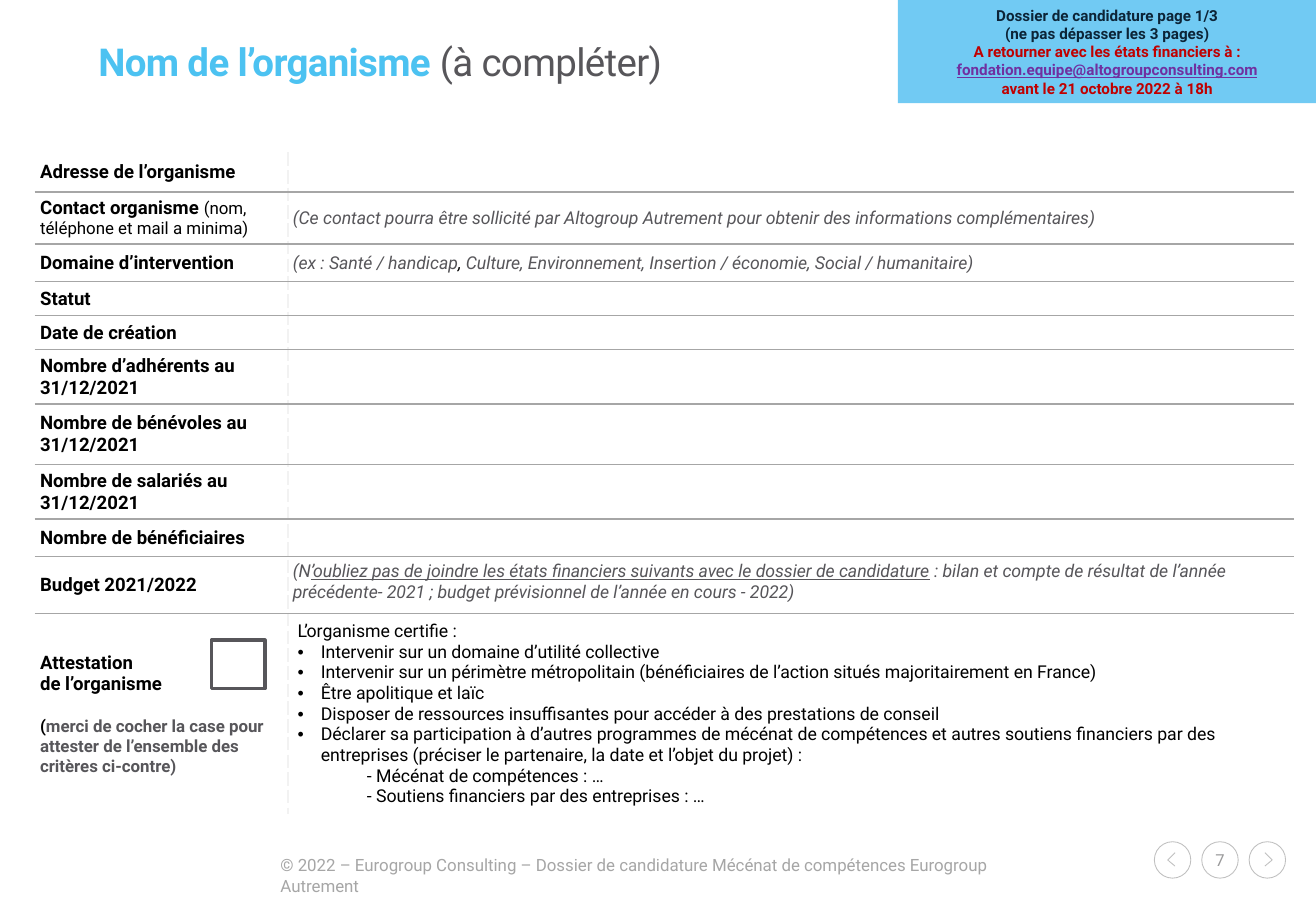
from dataclasses import dataclass
from typing import Optional

from lxml import etree
from pptx import Presentation
from pptx import util as u
from pptx.dml.color import RGBColor
from pptx.enum import shapes, text
from pptx.oxml import ns

PX = u.Inches(1) // 100
FONT = "Roboto"
BLACK = RGBColor(0, 0, 0)
WHITE = RGBColor(255, 255, 255)
GREY = RGBColor(0x57, 0x56, 0x5A)
RULE = RGBColor(0xA6, 0xA6, 0xA6)
DIVIDER = RGBColor(0xF2, 0xF2, 0xF2)
RING = RGBColor(0xBF, 0xBF, 0xBF)
PAGE = RGBColor(0x9A, 0x9A, 0x9B)
CYAN = RGBColor(0x4C, 0xC2, 0xF1)
SKY = RGBColor(0x71, 0xCA, 0xF3)
NAVY = RGBColor(0x0C, 0x24, 0x37)
RED = RGBColor(0xC0, 0, 0)
PURPLE = RGBColor(0x70, 0x30, 0xA0)


@dataclass(frozen=True)
class Run:
    words: str
    size: float = 10.5
    color: RGBColor = BLACK
    bold: bool = False
    italic: bool = False
    underline: bool = False


@dataclass(frozen=True)
class Para:
    runs: tuple[Run, ...]
    align: Optional[text.PP_ALIGN] = None
    indent: int = 0
    bullet: bool = False
    before: float = 0


@dataclass(frozen=True)
class Row:
    height: int
    label: tuple[Para, ...]
    answer: tuple[Para, ...] = ()
    anchor: text.MSO_ANCHOR = text.MSO_ANCHOR.MIDDLE
    answer_inset: int = 4


def label(words: str, *more: Run) -> Para:
    return Para((Run(words, 11, bold=True), *more))


def hint(words: str, color: RGBColor = GREY, underline: bool = False) -> Run:
    return Run(words, color=color, italic=True, underline=underline)


def bullet(words: str) -> Para:
    return Para((Run(words),), indent=19, bullet=True)


def header(words: str, color: RGBColor, underline: bool = False) -> Para:
    return Para((Run(words, 9, color, True, underline=underline),), text.PP_ALIGN.CENTER)


ROWS = [
    Row(32, (label("Adresse de l’organisme"),)),
    Row(41, (label("Contact organisme ", Run("(nom, téléphone et mail a minima)", 10)),),
        (Para((hint("(Ce contact pourra être sollicité par Altogroup Autrement pour "
                    "obtenir des informations complémentaires)"),)),)),
    Row(31, (label("Domaine d’intervention"),),
        (Para((hint("(ex : Santé / handicap"), hint(", ", BLACK),
               hint("Culture, Environnement, Insertion / économie, Social / humanitaire)"))),)),
    Row(28, (label("Statut"),)),
    Row(28, (label("Date de création"),)),
    Row(43, (label("Nombre d’adhérents au 31/12/2021"),)),
    Row(50, (label("Nombre de bénévoles au 31/12/2021"),)),
    Row(43, (label("Nombre de salariés au 31/12/2021"),)),
    Row(31, (label("Nombre de bénéficiaires"),)),
    Row(47, (label("Budget 2021/2022"),),
        (Para((hint("(N"),
               hint("’oubliez pas de joindre les états financiers suivants avec le dossier "
                    "de candidature", underline=True),
               hint(" : bilan et compte de résultat de l’année précédente- 2021 ; budget "
                    "prévisionnel de l’année en cours - 2022)"))),),
        anchor=text.MSO_ANCHOR.TOP),
    Row(165, (label("Attestation"), label("de l’organisme"),
              Para((Run("(", 10, bold=True),
                    Run("merci de cocher la case pour attester de l’ensemble des critères "
                        "ci-contre)", 10, GREY, True)), before=13)),
        (Para((Run("L’organisme certifie :"),)),
         bullet("Intervenir sur un domaine d’utilité collective"),
         bullet("Intervenir sur un périmètre métropolitain (bénéficiaires de l’action "
                "situés majoritairement en France)"),
         bullet("Être apolitique et laïc"),
         bullet("Disposer de ressources insuffisantes pour accéder à des prestations de conseil"),
         bullet("Déclarer sa participation à d’autres programmes de mécénat de compétences et "
                "autres soutiens financiers par des entreprises (préciser le partenaire, la "
                "date et l’objet du projet) :"),
         Para((Run("- Mécénat de compétences : …"),), indent=57),
         Para((Run("- Soutiens financiers par des entreprises : …"),), indent=57)),
        answer_inset=8),
]

HEADER = (
    header("Dossier de candidature page 1/3", NAVY),
    header("(ne pas dépasser les 3 pages)", NAVY),
    header("A retourner avec les états financiers à :", RED),
    header("fondation.equipe@altogroupconsulting.com", PURPLE, True),
    header("avant le 21 octobre 2022 à 18h", RED),
)


def write(frame, paras: tuple[Para, ...]) -> None:
    for i, para in enumerate(paras):
        line = frame.add_paragraph() if i else frame.paragraphs[0]
        line.alignment = para.align
        if para.before:
            line.space_before = u.Pt(para.before)
        if para.indent:
            props = line._p.get_or_add_pPr()
            props.set("marL", str(para.indent * PX))
            props.set("indent", str(-para.indent * PX if para.bullet else 0))
            if para.bullet:
                etree.SubElement(props, ns.qn("a:buFont")).set("typeface", "Arial")
                etree.SubElement(props, ns.qn("a:buChar")).set("char", "•")
        for part in para.runs:
            run = line.add_run()
            run.text = part.words
            font = run.font
            font.name, font.size = FONT, u.Pt(part.size)
            font.bold, font.italic, font.underline = part.bold, part.italic, part.underline
            font.color.rgb = part.color


def set_borders(cell, sides: dict[str, tuple[RGBColor, str]]) -> None:
    """Add borders in the L, R, T, B order that the schema asks for, ahead of the fill."""
    props = cell._tc.get_or_add_tcPr()
    for i, (side, (color, dash)) in enumerate(sides.items()):
        border = etree.Element(ns.qn(f"a:ln{side}"), w=str(u.Pt(1)))
        fill = etree.SubElement(border, ns.qn("a:solidFill"))
        etree.SubElement(fill, ns.qn("a:srgbClr")).set("val", str(color))
        etree.SubElement(border, ns.qn("a:prstDash")).set("val", dash)
        props.insert(i, border)


def add_form(slide) -> None:
    widths = (208, 827)
    form = slide.shapes.add_table(len(ROWS), 2, 29 * PX, 126 * PX, sum(widths) * PX,
                                  sum(row.height for row in ROWS) * PX).table
    form.first_row = form.horz_banding = False
    for column, width in zip(form.columns, widths):
        column.width = width * PX
    for r, row in enumerate(ROWS):
        form.rows[r].height = row.height * PX
        for c, paras in enumerate((row.label, row.answer)):
            cell = form.cell(r, c)
            cell.margin_left = (row.answer_inset if c else 4) * PX
            cell.margin_right = cell.margin_top = cell.margin_bottom = 4 * PX
            cell.vertical_anchor = row.anchor if c else text.MSO_ANCHOR.MIDDLE
            cell.fill.solid()
            cell.fill.fore_color.rgb = WHITE
            write(cell.text_frame, paras)
            if not paras:
                empty = cell.text_frame.paragraphs[0]._p
                etree.SubElement(empty, ns.qn("a:endParaRPr")).set("sz", "1050")
            sides = {"L" if c else "R": (DIVIDER, "sysDash")}
            if r:
                sides["T"] = (RULE, "solid")
            if r < len(ROWS) - 1:
                sides["B"] = (RULE, "solid")
            set_borders(cell, sides)


def style(shape, fill: Optional[RGBColor], line: Optional[RGBColor], weight: float = 0.5) -> None:
    shape.shadow.inherit = False
    for paint, color in ((shape.fill, fill), (shape.line.fill, line)):
        if color is None:
            paint.background()
        else:
            paint.solid()
            paint.fore_color.rgb = color
    if line is not None:
        shape.line.width = u.Pt(weight)


def add_box(slide, kind, left: int, top: int, width: int, height: int):
    return slide.shapes.add_shape(kind, left * PX, top * PX, width * PX, height * PX)


def add_navigation(slide) -> None:
    for i, direction in enumerate((-1, 0, 1)):
        left = 950 + 39 * i
        ring = add_box(slide, shapes.MSO_SHAPE.OVAL, left, 693, 30, 30)
        style(ring, None, RING)
        if direction:
            middle = left + 15
            back, tip = middle - 2 * direction, middle + 4 * direction
            path = slide.shapes.build_freeform(back, 702, PX)
            path.add_line_segments([(tip, 708), (back, 713)], close=False)
            style(path.convert_to_shape(), None, RING)
        else:
            ring.text_frame.word_wrap = False
            write(ring.text_frame, (Para((Run("7", 9.8, PAGE),), text.PP_ALIGN.CENTER),))


def add_title(slide) -> None:
    title = slide.shapes.title
    title.left, title.top, title.width, title.height = (n * PX for n in (81, 35, 921, 37))
    frame = title.text_frame
    frame.margin_left = frame.margin_right = frame.margin_top = frame.margin_bottom = 0
    frame.vertical_anchor = text.MSO_ANCHOR.MIDDLE
    write(frame, (Para((Run("Nom de l’organisme ", 22.8, CYAN, True),
                        Run("(à compléter)", 22.8, GREY)), text.PP_ALIGN.LEFT),))
    line = frame.paragraphs[0]
    line.line_spacing = 0.86
    for run in line.runs:
        run.font._element.set("spc", "-40")


def main() -> None:
    prs = Presentation()
    prs.slide_width, prs.slide_height = 1083 * PX, 750 * PX
    slide = prs.slides.add_slide(prs.slide_layouts[5])
    add_title(slide)
    add_navigation(slide)
    footer = slide.shapes.add_textbox(221 * PX, 699 * PX, 647 * PX, 27 * PX).text_frame
    footer.word_wrap = True
    write(footer, (Para((Run("© 2022 – Eurogroup Consulting – Dossier de candidature Mécénat "
                             "de compétences Eurogroup Autrement", 10, RULE),)),))
    add_form(slide)
    style(add_box(slide, shapes.MSO_SHAPE.RECTANGLE, 174, 527, 44, 40), WHITE, GREY, 2)
    deadline = add_box(slide, shapes.MSO_SHAPE.RECTANGLE, 739, 0, 344, 85)
    style(deadline, SKY, None)
    write(deadline.text_frame, HEADER)
    prs.save("out.pptx")


if __name__ == "__main__":
    main()
